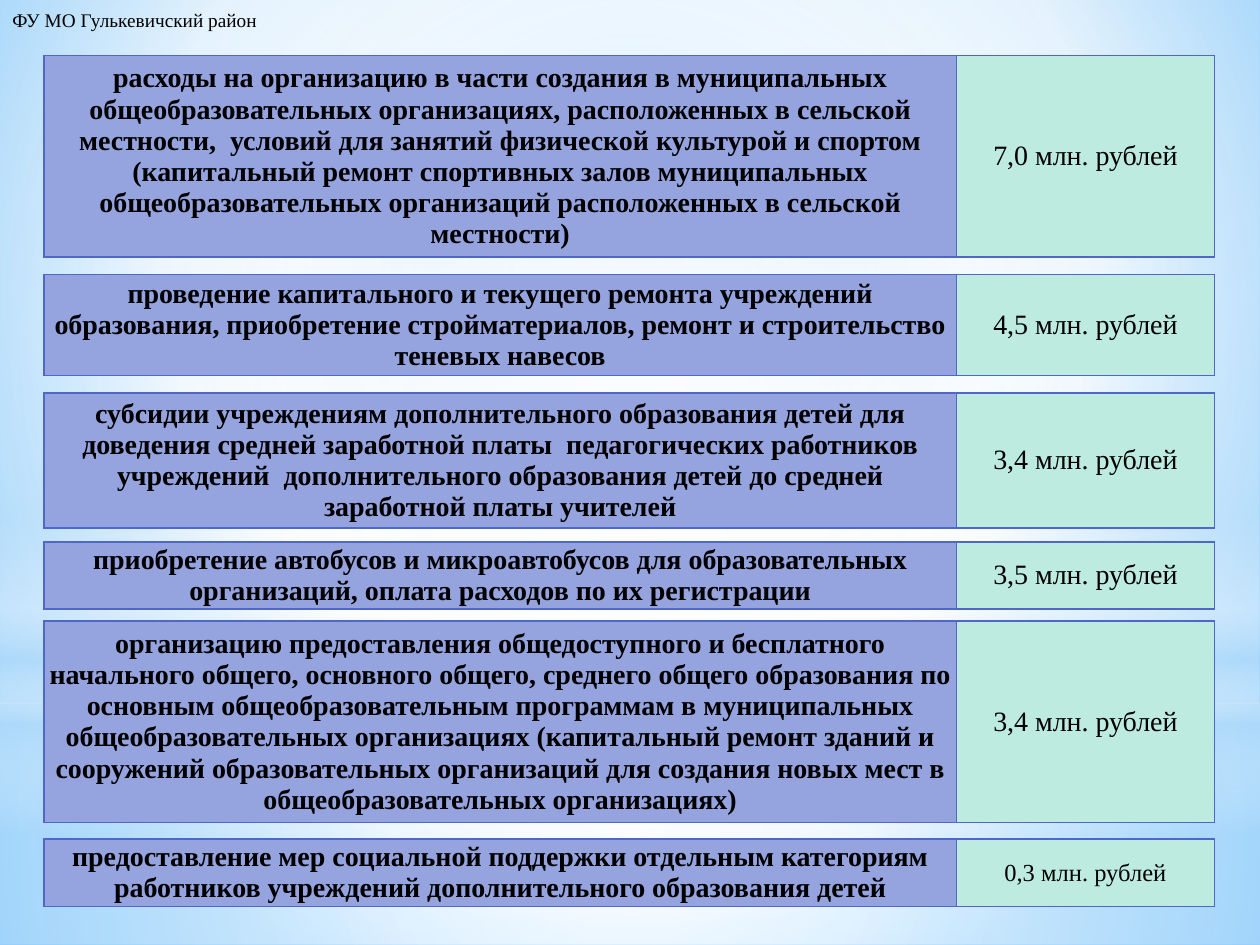
from lxml.etree import SubElement, fromstring
from pptx import Presentation
from pptx.dml.color import RGBColor
from pptx.enum.shapes import MSO_SHAPE
from pptx.enum.text import MSO_ANCHOR, MSO_AUTO_SIZE, PP_ALIGN
from pptx.oxml.ns import qn
from pptx.util import Inches, Pt

NS = "http://schemas.openxmlformats.org/drawingml/2006/main"
ITEMS = [
    (4.4, 16, "расходы на организацию в части создания в муниципальных общеобразовательных организациях, "
     "расположенных в сельской местности,  условий для занятий физической культурой и спортом "
     "(капитальный ремонт спортивных залов муниципальных общеобразовательных организаций "
     "расположенных в сельской местности)", "7,0 млн. рублей", 16),
    (21.8, 8, "проведение капитального и текущего ремонта учреждений образования, приобретение "
     "стройматериалов, ремонт и строительство теневых навесов", "4,5 млн. рублей", 16),
    (31.2, 10.7, "субсидии учреждениям дополнительного образования детей для доведения средней "
     "заработной платы  педагогических работников учреждений  дополнительного образования детей "
     "до средней заработной платы учителей", "3,4 млн. рублей", 16),
    (43, 5.3, "приобретение автобусов и микроавтобусов для образовательных организаций, "
     "оплата расходов по их регистрации", "3,5 млн. рублей", 16),
    (49.3, 14.8, "организацию предоставления общедоступного и бесплатного начального общего, "
     "основного общего, среднего общего образования по основным общеобразовательным программам "
     "в муниципальных общеобразовательных организациях (капитальный ремонт зданий и сооружений "
     "образовательных организаций для создания новых мест в общеобразовательных организациях)",
     "3,4 млн. рублей", 16),
    (66.6, 5.3, "предоставление мер социальной поддержки отдельным категориям работников учреждений "
     "дополнительного образования детей", "0,3 млн. рублей", 14),
]


def tint(code):
    return RGBColor.from_string(code)


class Deck:
    """Style and current slide, laid on a grid of 100 columns by 75 rows."""

    font, ink, edge = "Times New Roman", "000000", "4E67C8"
    fills = "95A4DE", "BEEBDF"
    left, widths = 3.5, (72.4, 20.5)

    def __init__(self):
        self.show = Presentation()
        self.show.slide_width, self.show.slide_height = Inches(10), Inches(7.5)
        self.slide = self.show.slides.add_slide(self.show.slide_layouts[6])

    def place(self, *cells):
        return [Inches(cell / 10) for cell in cells]

    def blend(self, fill, root, stops, focus=None):
        fill.background()
        grad = fromstring(f'<a:gradFill xmlns:a="{NS}" rotWithShape="1"><a:gsLst/></a:gradFill>')
        for spot, code, *alpha in stops:
            stop = SubElement(grad[0], qn("a:gs"), pos=str(spot * 1000))
            color = SubElement(stop, qn("a:srgbClr"), val=code)
            for part in alpha:
                SubElement(color, qn("a:alpha"), val=str(part * 1000))
        if focus:
            ring = SubElement(grad, qn("a:path"), {"path": "circle"})
            sides = {side: str(share * 1000) for side, share in zip("ltrb", focus)}
            SubElement(ring, qn("a:fillToRect"), sides)
        else:
            SubElement(grad, qn("a:lin"), ang="5400000", scaled="0")
        old = root.find(".//" + qn("a:noFill"))
        old.getparent().replace(old, grad)

    def back(self, stops, focus):
        self.blend(self.slide.background.fill, self.slide.element, stops, focus)

    def glow(self, kind, top, high, stops, focus=None):
        shape = self.slide.shapes.add_shape(kind, *self.place(0, top, 100, high))
        shape.shadow.inherit = False
        self.blend(shape.fill, shape.element, stops, focus)
        shape.line.fill.background()

    def fit(self, frame, text, size, bold=False, align=PP_ALIGN.LEFT):
        frame.text = text
        line = frame.paragraphs[0]
        line.alignment = align
        font = line.runs[0].font
        font.name, font.size, font.bold = self.font, Pt(size), bold
        font.color.rgb = tint(self.ink)

    def label(self, text, box, size):
        frame = self.slide.shapes.add_textbox(*self.place(*box)).text_frame
        frame.word_wrap = False
        frame.auto_size = MSO_AUTO_SIZE.SHAPE_TO_FIT_TEXT
        self.fit(frame, text, size)

    def border(self, cell):
        props = cell._tc.get_or_add_tcPr()
        for spot, side in enumerate("LRTB"):
            props.insert(spot, fromstring(
                f'<a:ln{side} xmlns:a="{NS}" w="12700"><a:solidFill>'
                f'<a:srgbClr val="{self.edge}"/></a:solidFill></a:ln{side}>'))

    def table(self, top, high, name, cost, size):
        box = self.place(self.left, top, sum(self.widths), high)
        grid = self.slide.shapes.add_table(1, 2, *box).table
        grid.first_row = grid.horz_banding = False
        for spot, (text, points) in enumerate([(name, 16), (cost, size)]):
            grid.columns[spot].width = self.place(self.widths[spot])[0]
            cell = grid.cell(0, spot)
            self.fit(cell.text_frame, text, points, spot == 0, PP_ALIGN.CENTER)
            cell.vertical_anchor = MSO_ANCHOR.MIDDLE
            cell.fill.solid()
            cell.fill.fore_color.rgb = tint(self.fills[spot])
            self.border(cell)
        first = grid.cell(0, 0)
        first.margin_left = first.margin_right = self.place(0.4)[0]
        first.margin_top = first.margin_bottom = 0


def main():
    deck = Deck()
    rect, mid = MSO_SHAPE.RECTANGLE, (50, 50, 50, 50)
    white, blue = "FFFFFF", "B4DCFA"
    deck.back([(0, "9ED5FF"), (60, white), (100, "5BB9FF")], (20, 10, 20, 60))
    deck.glow(rect, 55.8, 19.2, [(0, white, 91), (37, white, 76), (100, blue, 79)], mid)
    deck.glow(rect, 0, 55.8, [(0, white, 89), (48, white, 62), (100, blue, 79)], mid)
    deck.glow(rect, 41.2, 25, [(0, white, 0), (29, white, 30), (45, blue, 40),
                               (55, white, 26), (65, blue, 60), (100, white, 0)])
    deck.glow(MSO_SHAPE.OVAL, 17.5, 55.8, [(0, white, 100), (56, white, 0)], mid)
    deck.label("ФУ МО Гулькевичский район", (0, 0.2, 21.8, 2.9), 11)
    for item in ITEMS:
        deck.table(*item)
    deck.show.save("out.pptx")


if __name__ == "__main__":
    main()
